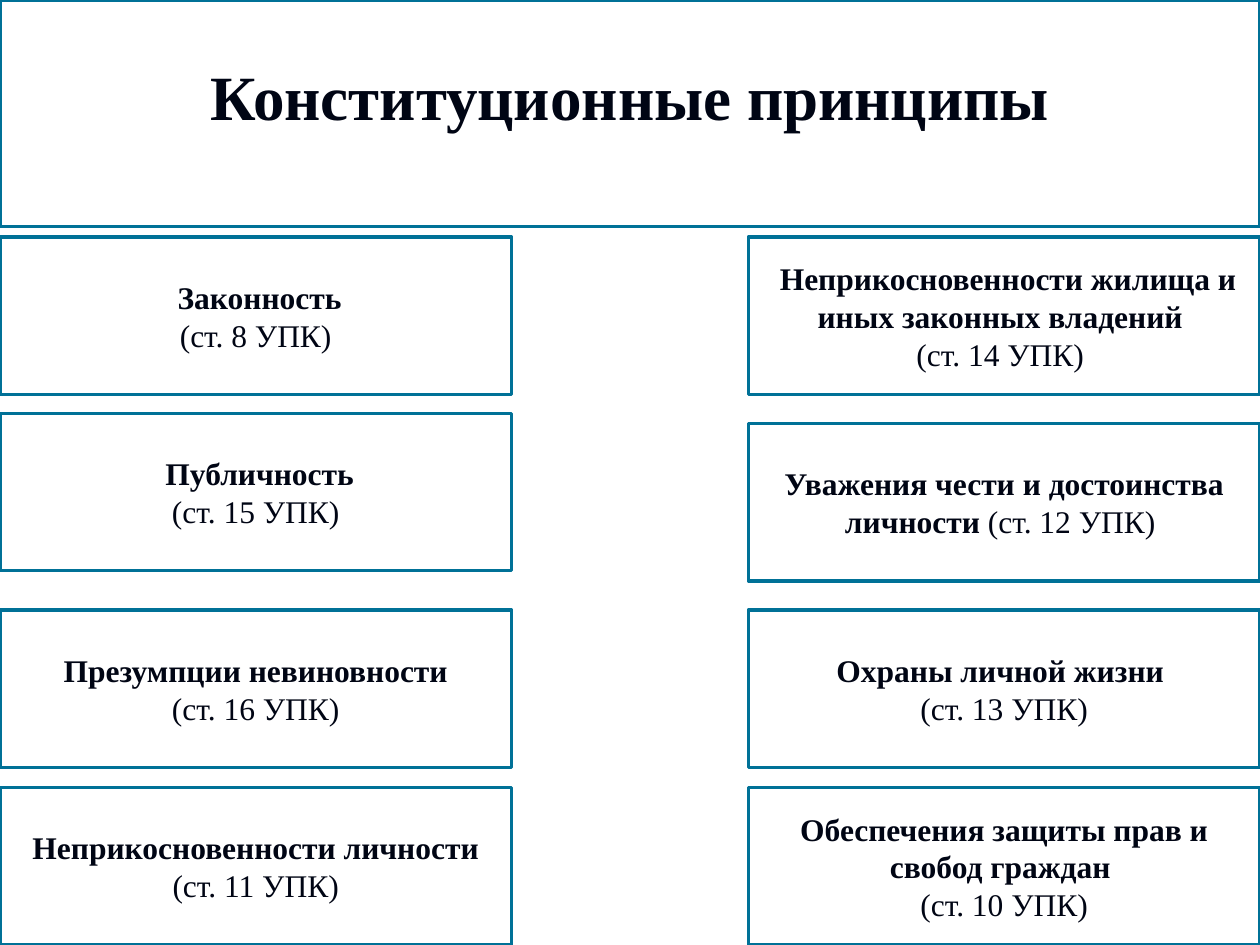
from dataclasses import dataclass

from pptx import Presentation
from pptx.dml.color import RGBColor
from pptx.enum.shapes import MSO_SHAPE as Shape
from pptx.enum.text import MSO_ANCHOR as Anchor, PP_ALIGN as Align
from pptx.util import Inches, Pt


@dataclass(frozen=True)
class Theme:
    fill: RGBColor = RGBColor(0xFF, 0xFF, 0xFF)
    line: RGBColor = RGBColor(0x00, 0x71, 0x97)
    text: RGBColor = RGBColor(0x00, 0x05, 0x14)
    font: str = "Times New Roman"
    line_width: Pt = Pt(2)
    title_size: Pt = Pt(36)
    body_size: Pt = Pt(18)


@dataclass(frozen=True)
class Principle:
    name: str
    article: str
    top: float
    same_line: bool = False


THEME = Theme()
SLIDE_W, SLIDE_H = 10, 7.5
TITLE_H = 1.8
CARD_W, CARD_H = 4.06, 1.25
ROWS = (1.88, 3.28, 4.84, SLIDE_H - CARD_H)
RAISED_ROW = 3.36  # second row of the right column

LEFT_COLUMN = (
    Principle(" Законность", "(ст. 8 УПК)", ROWS[0]),
    Principle(" Публичность", "(ст. 15 УПК)", ROWS[1]),
    Principle("Презумпции невиновности", "(ст. 16 УПК)", ROWS[2]),
    Principle("Неприкосновенности личности", "(ст. 11 УПК)", ROWS[3]),
)
RIGHT_COLUMN = (
    Principle(" Неприкосновенности жилища и иных законных владений ",
              "(ст. 14 УПК) ", ROWS[0]),
    Principle("Уважения чести и достоинства личности ",
              "(ст. 12 УПК) ", RAISED_ROW, same_line=True),
    Principle("Охраны личной жизни ", "(ст. 13 УПК)", ROWS[2]),
    Principle("Обеспечения защиты прав и свобод граждан ",
              "(ст. 10 УПК)", ROWS[3]),
)


def add_box(s, left: float, top: float, width: float, height: float):
    """Draw an outlined box and return its text frame."""
    sp = s.shapes.add_shape(Shape.RECTANGLE, Inches(left), Inches(top),
                            Inches(width), Inches(height))
    sp.shadow.inherit = False
    sp.fill.solid()
    sp.fill.fore_color.rgb = THEME.fill
    sp.line.color.rgb = THEME.line
    sp.line.width = THEME.line_width
    tf = sp.text_frame
    for key, value in {"word_wrap": True, "vertical_anchor": Anchor.MIDDLE}.items():
        setattr(tf, key, value)
    tf.paragraphs[0].alignment = Align.CENTER
    return tf


def add_run(p, text: str, size: Pt, bold: bool) -> None:
    r = p.add_run()
    r.text = text
    for key, value in {"name": THEME.font, "size": size, "bold": bold}.items():
        setattr(r.font, key, value)
    r.font.color.rgb = THEME.text


def add_title(s, text: str) -> None:
    tf = add_box(s, 0, 0, SLIDE_W, TITLE_H)
    tf.margin_bottom = Inches(0.34)  # lifts the title above the middle
    add_run(tf.paragraphs[0], text, THEME.title_size, True)


def add_principle(s, left: float, item: Principle) -> None:
    tf = add_box(s, left, item.top, CARD_W, CARD_H)
    p = tf.paragraphs[0]
    add_run(p, item.name, THEME.body_size, True)
    if not item.same_line:
        p = tf.add_paragraph()
        p.alignment = Align.CENTER
    add_run(p, item.article, THEME.body_size, False)


def main() -> None:
    prs = Presentation()
    prs.slide_width, prs.slide_height = Inches(SLIDE_W), Inches(SLIDE_H)
    s = prs.slides.add_slide(prs.slide_layouts[6])

    # Heading
    add_title(s, "Конституционные принципы")

    # Two columns of principles, flush with the slide edges
    for left, column in ((0, LEFT_COLUMN), (SLIDE_W - CARD_W, RIGHT_COLUMN)):
        for item in column:
            add_principle(s, left, item)

    prs.save("out.pptx")


if __name__ == "__main__":
    main()
